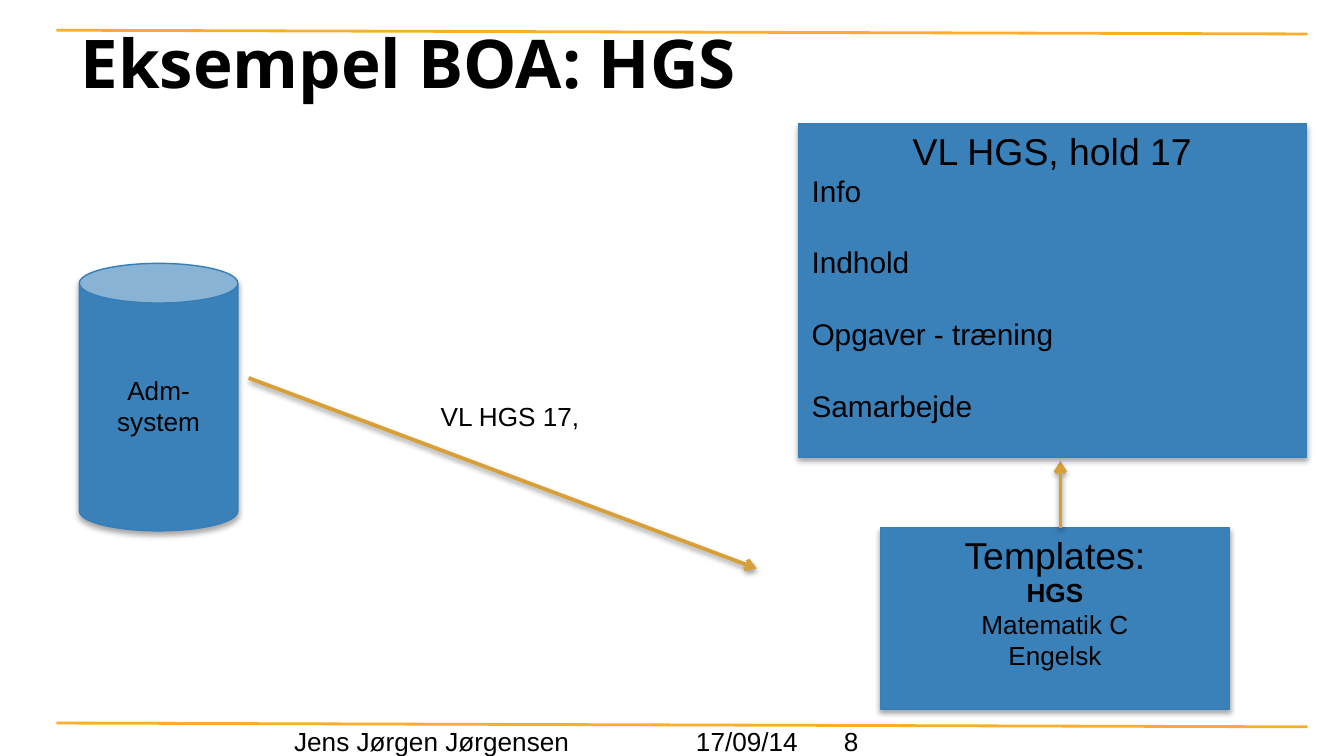
from lxml import etree
from pptx import Presentation
from pptx.dml.color import RGBColor
from pptx.enum.shapes import MSO_CONNECTOR, MSO_SHAPE
from pptx.enum.text import MSO_ANCHOR, PP_ALIGN
from pptx.oxml.ns import qn
from pptx.util import Inches, Pt

STRAIGHT = MSO_CONNECTOR.STRAIGHT
RECT, CAN = MSO_SHAPE.RECTANGLE, MSO_SHAPE.CAN
TOP, MIDDLE, BOTTOM = MSO_ANCHOR.TOP, MSO_ANCHOR.MIDDLE, MSO_ANCHOR.BOTTOM
LEFT, CENTER = PP_ALIGN.LEFT, PP_ALIGN.CENTER

BLACK = RGBColor(0x00, 0x00, 0x00)
BLUE = RGBColor(0x3A, 0x81, 0xBA)
BLUE_EDGE = RGBColor(0x36, 0x7E, 0xB9)
RULE = RGBColor(0xFB, 0xAD, 0x2B)
ARROW = RGBColor(0xD8, 0x9F, 0x39)

W = Inches(10)
H = W * 9 // 16


def area(left, top, width, height):
    return [round(share * size / 100)
            for share, size in zip((left, top, width, height), (W, H, W, H))]


def add_shadow(effects, alpha, dist):
    shadow = etree.SubElement(effects, qn("a:outerShdw"), blurRad=str(Pt(3.1)),
                              dist=str(Pt(dist)), dir="5400000", rotWithShape="0")
    color = etree.SubElement(shadow, qn("a:srgbClr"), val=str(BLACK))
    etree.SubElement(color, qn("a:alpha"), val=str(alpha * 1000))


def line(text, size=14, bold=False, align=LEFT, gap=0):
    return text, size, bold, align, gap


def write(tf, lines, anchor=TOP, font="Arial"):
    tf.word_wrap = True
    tf.vertical_anchor = anchor
    for i, (text, size, bold, align, gap) in enumerate(lines):
        p = tf.paragraphs[0] if i == 0 else tf.add_paragraph()
        p.text = text
        p.alignment = align
        if gap:
            p.space_before = Pt(gap)
        for r in p.runs:
            r.font.name = font
            r.font.size = Pt(size)
            r.font.bold = bold
            r.font.color.rgb = BLACK


def add_label(s, place, text):
    sp = s.shapes.add_textbox(*area(*place))
    write(sp.text_frame, [line(text)])


def add_title(s, place, text):
    tf = s.shapes.add_textbox(*area(*place)).text_frame
    tf.margin_top = 0
    tf.margin_bottom = Inches(0.41)
    write(tf, [line(text, 36, True)], BOTTOM, "Open Sans")


def add_block(s, kind, place, lines, anchor=TOP):
    sp = s.shapes.add_shape(kind, *area(*place))
    sp.fill.solid()
    sp.fill.fore_color.rgb = BLUE
    sp.line.color.rgb = BLUE_EDGE
    sp.line.width = Pt(0.75)
    sp.shadow.inherit = False
    add_shadow(sp.element.spPr.find(qn("a:effectLst")), 35, 1.8)
    sp.text_frame.margin_top = Inches(0.03)
    write(sp.text_frame, lines, anchor)


def add_line(s, ends, color, width):
    c = s.shapes.add_connector(STRAIGHT, *area(*ends))
    c.line.color.rgb = color
    c.line.width = Pt(width)
    effects = etree.SubElement(c.element.spPr, qn("a:effectLst"))
    return c, effects


def add_arrow(s, ends):
    c, effects = add_line(s, ends, ARROW, 2)
    etree.SubElement(c.element.spPr.find(qn("a:ln")), qn("a:tailEnd"), type="arrow")
    add_shadow(effects, 38, 1.6)


def main():
    prs = Presentation()
    prs.slide_width, prs.slide_height = W, H
    s = prs.slides.add_slide(prs.slide_layouts[6])

    for y in (95.65, 4):
        add_line(s, (4.2, y, 97.3, y + 0.5), RULE, 1.5)
    add_title(s, (5, 4.09, 90, 16.71), "Eksempel BOA: HGS")

    for left, width, text in ((50.8, 10.2, "17/09/14"),
                              (20.9, 29.3, "Jens Jørgen Jørgensen"),
                              (61.8, 4.8, "8")):
        add_label(s, (left, 95.11, width, 4.45), text)

    add_block(s, CAN, (5.9, 34.84, 11.8, 35.38),
              [line("Adm-\vsystem", align=CENTER)], MIDDLE)
    add_label(s, (31.8, 52.09, 16.5, 6.05), "VL HGS 17,")
    add_arrow(s, (18.5, 50, 56.3, 75.2))

    add_block(s, RECT, (65.5, 69.8, 26, 24),
              [line("Templates:", 20, align=CENTER),
               line("HGS", bold=True, align=CENTER),
               line("Matematik C", align=CENTER),
               line("Engelsk", align=CENTER)])
    add_arrow(s, (78.9, 69.8, 78.9, 61))

    topics = [line(text, 16, gap=19.2)
              for text in ("Indhold", "Opgaver - træning", "Samarbejde")]
    add_block(s, RECT, (59.4, 16.36, 37.8, 44.1),
              [line("VL HGS, hold 17", 20, align=CENTER), line("Info", 16)] + topics)

    prs.save("out.pptx")


if __name__ == "__main__":
    main()
